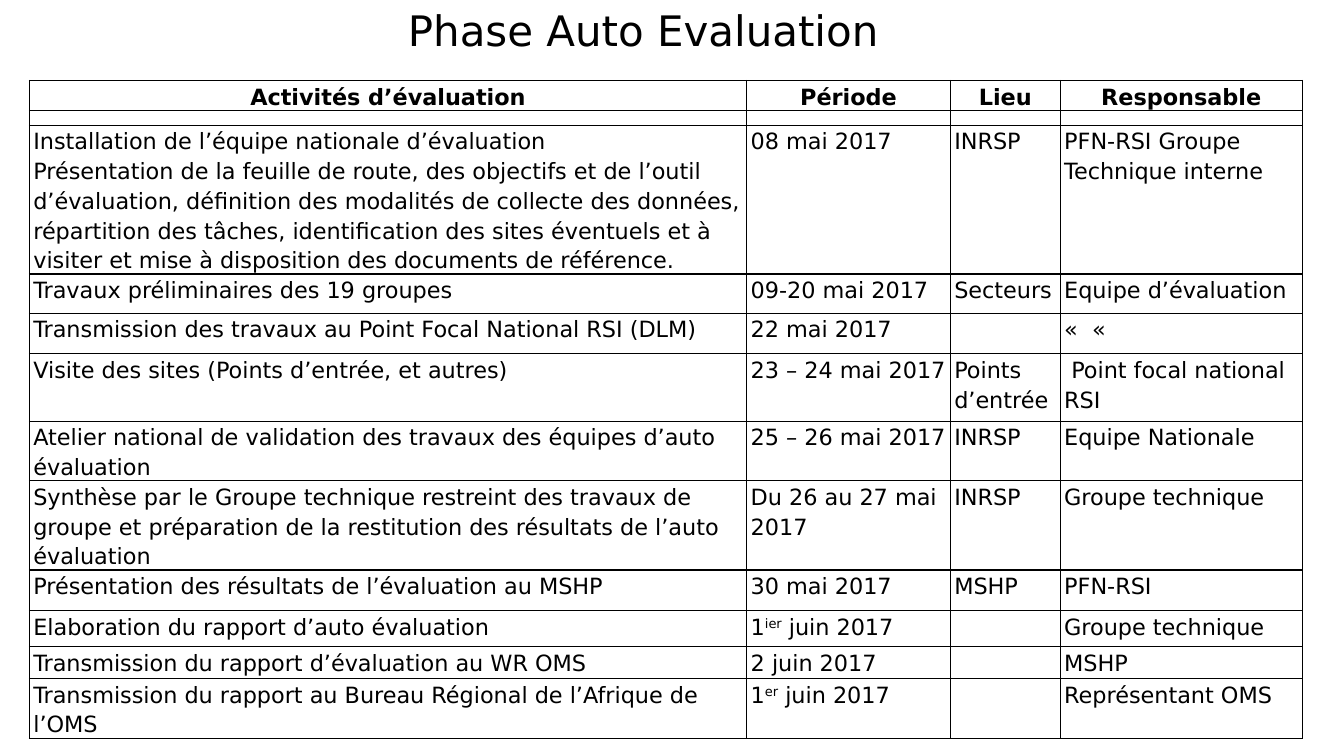
from lxml.etree import SubElement
from pptx import Presentation
from pptx.dml.color import RGBColor
from pptx.enum.text import MSO_AUTO_SIZE as AutoSize, PP_ALIGN as Align
from pptx.oxml.ns import qn
from pptx.util import Cm, Pt

BLACK = RGBColor(0x00, 0x00, 0x00)
FONT = "DejaVu Sans"
MARGIN = Cm(0.1)


def write_text(frame, text, size=16, bold=False, align=Align.LEFT, spacing=1.15):
    for number, line in enumerate(text.split("\n")):
        para = frame.add_paragraph() if number else frame.paragraphs[0]
        para.alignment = align
        para.line_spacing = spacing
        for position, piece in enumerate(line.split("^")):
            span = para.add_run()
            span.text = piece
            span.font.name = FONT
            span.font.size = Pt(size)
            span.font.bold = bold
            span.font.color.rgb = BLACK
            if position % 2:
                span.font._element.set("baseline", "30000")


def draw_borders(cell):
    properties = cell._tc.get_or_add_tcPr()
    for side in ("a:lnL", "a:lnR", "a:lnT", "a:lnB"):
        line = SubElement(properties, qn(side), w=str(Pt(1)))
        fill = SubElement(line, qn("a:solidFill"))
        SubElement(fill, qn("a:srgbClr"), val=str(BLACK))


HEADER = ("Activités d’évaluation", "Période", "Lieu", "Responsable")
SCHEDULE = [
    (0.64, HEADER),
    (0.38, ("", "", "", "")),
    (3.53, (
        "Installation de l’équipe nationale d’évaluation\n"
        "Présentation de la feuille de route, des objectifs et de l’outil d’évaluation, "
        "définition des modalités de collecte des données, répartition des tâches, "
        "identification des sites éventuels et à visiter et mise à disposition "
        "des documents de référence.",
        "08 mai 2017", "INRSP", "PFN-RSI Groupe Technique interne")),
    (0.99, ("Travaux préliminaires des 19 groupes",
            "09-20 mai 2017", "Secteurs", "Equipe d’évaluation")),
    (1.02, ("Transmission des travaux au Point Focal National RSI (DLM)",
            "22 mai 2017", "", "«  « ")),
    (1.7, ("Visite des sites (Points d’entrée, et autres)",
           "23 – 24 mai 2017", "Points d’entrée", " Point focal national RSI")),
    (1.17, ("Atelier national de validation des travaux des équipes d’auto évaluation",
            "25 – 26 mai 2017", "INRSP", "Equipe Nationale")),
    (1.7, ("Synthèse par le Groupe technique restreint des travaux de groupe et "
           "préparation de la restitution des résultats de l’auto évaluation",
           "Du 26 au 27 mai 2017", "INRSP", "Groupe technique")),
    (1.02, ("Présentation des résultats de l’évaluation au MSHP",
            "30 mai 2017", "MSHP", "PFN-RSI")),
    (0.91, ("Elaboration du rapport d’auto évaluation",
            "1^ier^ juin 2017", "", "Groupe technique")),
    (0.81, ("Transmission du rapport d’évaluation au WR OMS",
            "2 juin 2017", "", "MSHP")),
    (1.07, ("Transmission du rapport au Bureau Régional de l’Afrique de l’OMS",
            "1^er^ juin 2017", "", "Représentant OMS")),
]
COLUMN_WIDTHS = (18.08, 5.13, 2.77, 6.1)

deck = Presentation()
deck.slide_width, deck.slide_height = Cm(33.87), Cm(19.05)
slide = deck.slides.add_slide(deck.slide_layouts[6])

table_frame = slide.shapes.add_table(
    len(SCHEDULE), len(HEADER), Cm(0.74), Cm(2.03), Cm(32.08), Cm(16.97))
table = table_frame.table
table.first_row = False
table.horz_banding = False
for column, width in zip(table.columns, COLUMN_WIDTHS):
    column.width = Cm(width)

for row, (height, texts) in zip(table.rows, SCHEDULE):
    row.height = Cm(height)
    is_header = texts is HEADER
    for cell, text in zip(row.cells, texts):
        cell.margin_left = cell.margin_right = MARGIN
        cell.margin_top = cell.margin_bottom = 0
        draw_borders(cell)
        cell.fill.background()
        if text:
            write_text(cell.text_frame, text, bold=is_header,
                       align=Align.CENTER if is_header else Align.LEFT)
        else:
            SubElement(cell.text_frame.paragraphs[0]._p, qn("a:endParaRPr"), sz="600")
table_frame.height = Cm(16.97)

title_box = slide.shapes.add_textbox(Cm(10.03), 0, Cm(12.47), Cm(1.55))
title_box.text_frame.word_wrap = False
title_box.text_frame.auto_size = AutoSize.SHAPE_TO_FIT_TEXT
write_text(title_box.text_frame, "Phase Auto Evaluation", size=30, spacing=1.0)

deck.save("out.pptx")
